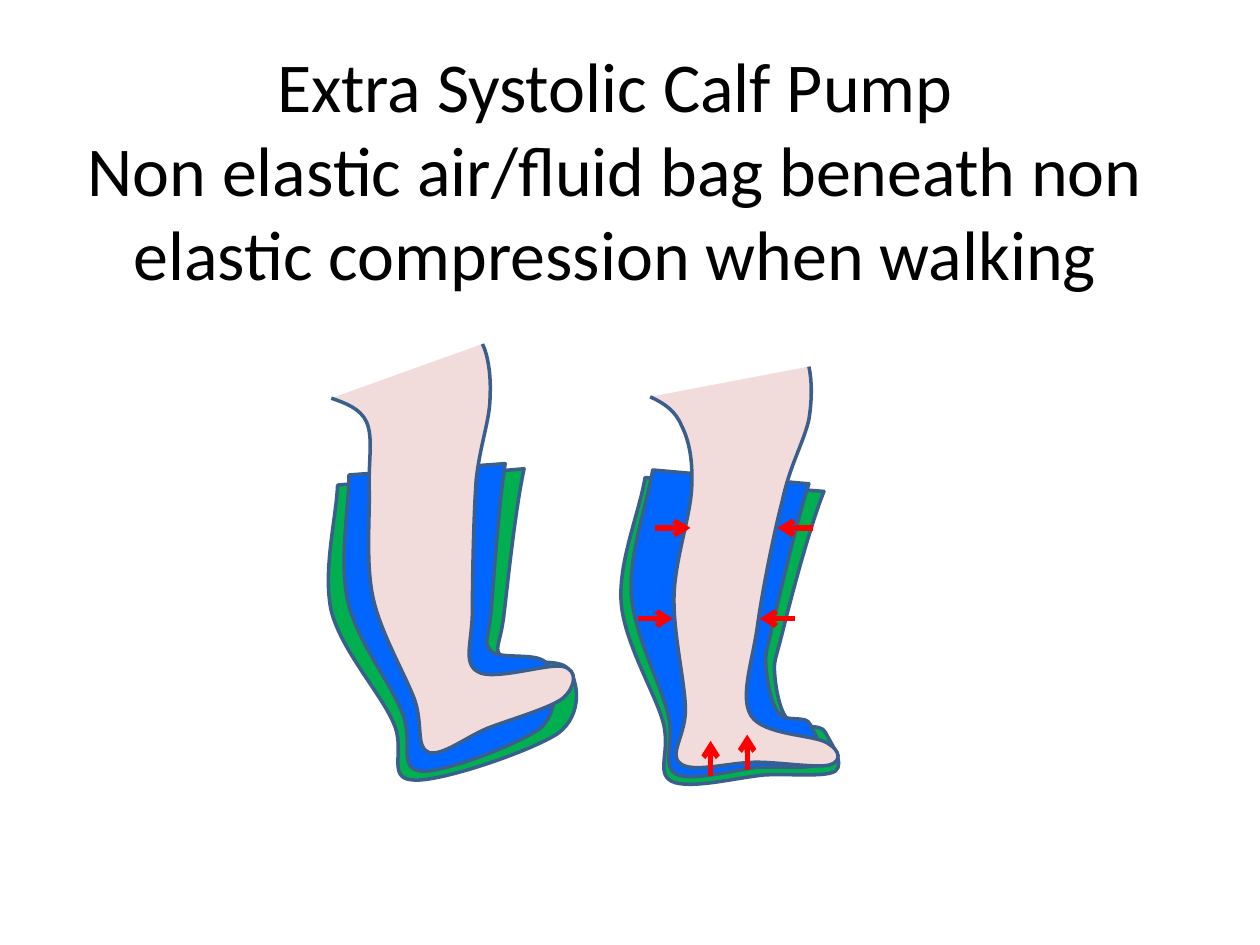
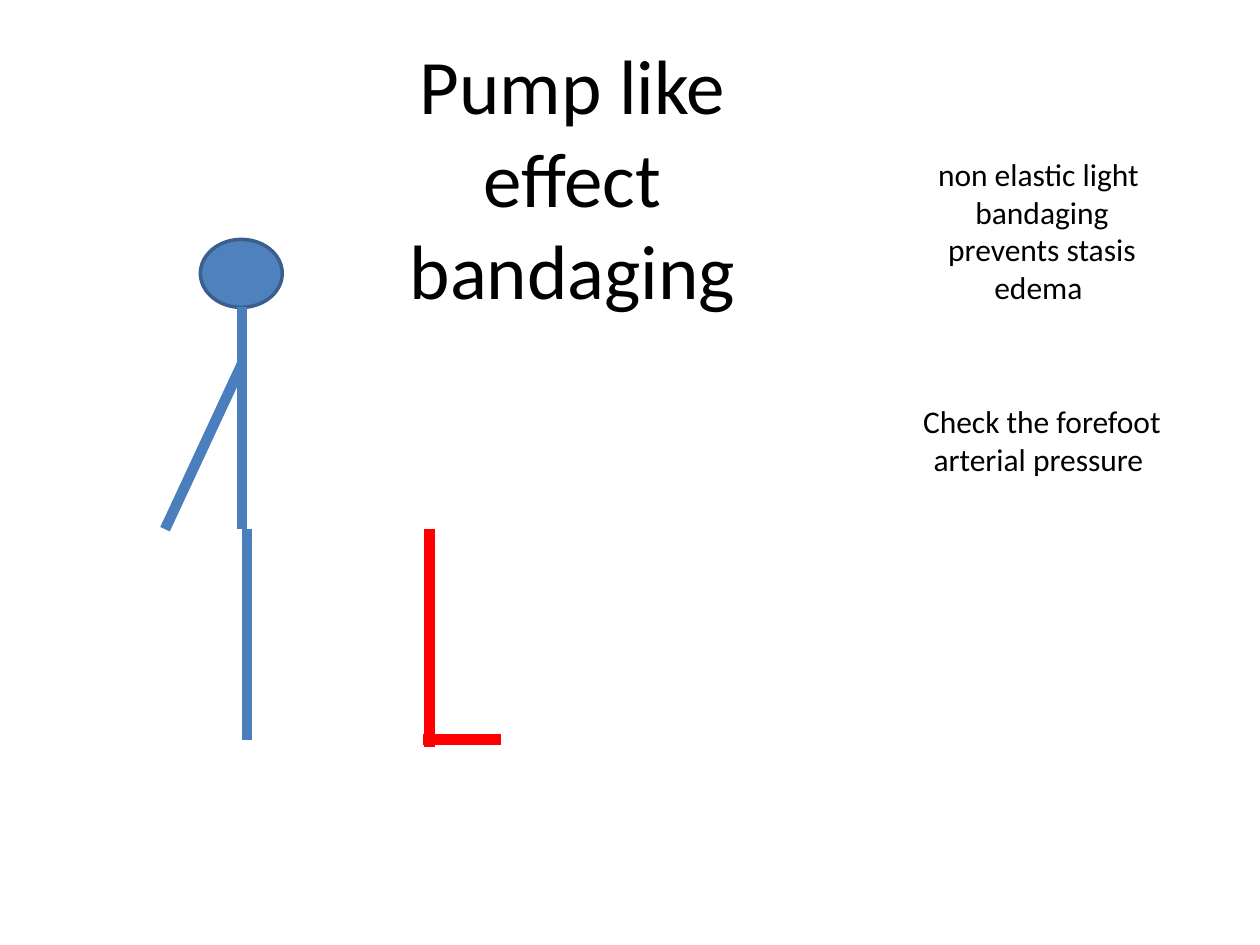
import math
from dataclasses import dataclass

import lxml.etree
import pptx
import pptx.dml.color
import pptx.enum.shapes
import pptx.enum.text
import pptx.oxml.ns
import pptx.util

RGBColor = pptx.dml.color.RGBColor
qn = pptx.oxml.ns.qn

BLACK = RGBColor(0x00, 0x00, 0x00)
SHELL_GREEN = RGBColor(0x00, 0xB0, 0x50)
LINER_BLUE = RGBColor(0x00, 0x66, 0xFF)
SKIN = RGBColor(0xF2, 0xDC, 0xDB)
OUTLINE = RGBColor(0x3A, 0x5F, 0x8C)
HEAD_BLUE = RGBColor(0x4F, 0x81, 0xBD)
BODY_BLUE = RGBColor(0x4B, 0x7E, 0xBC)
RED = RGBColor(0xFF, 0x00, 0x00)
FONT = "Calibri"

SLIDE_W = pptx.util.Inches(10)
SLIDE_H = pptx.util.Inches(7.5)
COLUMNS = 1000
CELL = SLIDE_W // COLUMNS
TITLE_ONLY = 5
ARROW_LENGTH = 28
LINER_SHIFT = (-2.5, -6)

Point = tuple[float, float]


@dataclass(frozen=True)
class Box:
    left: float
    top: float
    width: float
    height: float

    def emu(self) -> list[int]:
        return [round(v * CELL) for v in (self.left, self.top, self.width, self.height)]


@dataclass(frozen=True)
class Leg:
    shell: list[Point]
    limb: list[Point]
    centre: Point
    liner_width: float
    tilt: float = 0

    def liner(self) -> list[Point]:
        cos, sin = math.cos(math.radians(self.tilt)), math.sin(math.radians(self.tilt))
        cx, cy = self.centre
        dx, dy = LINER_SHIFT
        points = []
        for x, y in self.shell:
            across = ((x - cx) * cos + (y - cy) * sin) * self.liner_width
            along = (y - cy) * cos - (x - cx) * sin
            points.append((cx + dx + across * cos - along * sin,
                           cy + dy + across * sin + along * cos))
        return points


@dataclass(frozen=True)
class Stroke:
    start: Point
    end: Point
    color: RGBColor
    width: float
    arrow: bool = False


@dataclass(frozen=True)
class Note:
    text: str
    box: Box


LIFTED_LEG = Leg(
    shell=[
        (268, 385),
        (267, 411), (256, 453), (263, 485), (271, 516), (302, 550), (312, 573),
        (323, 595), (306, 618), (328, 619), (349, 621), (422, 596), (443, 582),
        (463, 567), (459, 540), (451, 531), (444, 521), (408, 529), (399, 522),
        (391, 515), (397, 513), (400, 488), (403, 463), (409, 404), (416, 372),
    ],
    limb=[
        (263, 316),
        (274, 320), (286, 324), (291, 335), (296, 347), (293, 362), (293, 385),
        (294, 408), (290, 445), (296, 474), (302, 502), (321, 534), (329, 555),
        (336, 575), (330, 593), (340, 597), (350, 601), (370, 585), (387, 578),
        (405, 571), (437, 562), (447, 554), (457, 545), (459, 532), (447, 529),
        (436, 526), (391, 541), (379, 533), (367, 526), (375, 509), (375, 484),
        (375, 458), (376, 409), (378, 381), (381, 353), (389, 333), (389, 315),
        (390, 297), (387, 281), (383, 273),
    ],
    centre=(357, 493),
    liner_width=0.83,
    tilt=-9.1,
)

STANDING_LEG = Leg(
    shell=[
        (512, 379),
        (508, 405), (491, 445), (493, 477), (495, 509), (519, 548), (526, 572),
        (533, 596), (520, 613), (533, 620), (547, 627), (585, 617), (607, 615),
        (628, 614), (655, 617), (663, 612), (671, 606), (659, 589), (655, 581),
        (651, 573), (632, 580), (626, 572), (619, 565), (616, 548), (615, 536),
        (614, 524), (615, 526), (621, 502), (627, 478), (642, 420), (654, 390),
    ],
    limb=[
        (516, 315),
        (527, 320), (536, 326), (541, 338), (547, 350), (550, 365), (549, 387),
        (548, 410), (536, 443), (535, 472), (534, 501), (543, 538), (544, 561),
        (545, 583), (530, 599), (540, 606), (549, 614), (580, 605), (600, 605),
        (620, 605), (649, 610), (659, 607), (668, 604), (667, 596), (657, 590),
        (647, 583), (606, 584), (596, 568), (587, 553), (597, 526), (601, 498),
        (605, 469), (614, 424), (621, 397), (627, 369), (638, 351), (642, 333),
        (645, 315), (644, 300), (642, 291),
    ],
    centre=(579, 500.5),
    liner_width=0.88,
)

PRESSURE_ARROWS = [
    ((520, 419), (1, 0)), ((506, 491), (1, 0)),
    ((645, 419), (-1, 0)), ((631, 491), (-1, 0)),
    ((564, 616), (0, -1)), ((593, 611), (0, -1)),
]

HEAD = Box(159, 190, 65, 54)
HIP_Y, ANKLE_Y = 420, 587
FIGURE = [
    Stroke((192, 244), (192, HIP_Y), BODY_BLUE, 6),
    Stroke((341, HIP_Y), (341, 593), RED, 6),
    Stroke((196, HIP_Y), (196, ANKLE_Y), BODY_BLUE, 6),
    Stroke((192, 289), (131, HIP_Y), BODY_BLUE, 6),
    Stroke((336, ANKLE_Y), (398, ANKLE_Y), RED, 6),
]

NOTES = [
    Note("non elastic light  bandaging prevents stasis edema ", Box(720, 118, 214, 131)),
    Note("Check the forefoot arterial pressure ", Box(720, 314, 214, 71)),
]


def write(tf, text: str, *, size: float, color: RGBColor = BLACK) -> None:
    tf.word_wrap = True
    tf.auto_size = pptx.enum.text.MSO_AUTO_SIZE.NONE
    tf.vertical_anchor = pptx.enum.text.MSO_ANCHOR.TOP
    for i, line in enumerate(text.split("\n")):
        p = tf.add_paragraph() if i else tf.paragraphs[0]
        p.alignment = pptx.enum.text.PP_ALIGN.CENTER
        r = p.add_run()
        r.text = line
        r.font.name = FONT
        r.font.size = pptx.util.Pt(size)
        r.font.color.rgb = color


def add_titled_slide(prs, title: str, box: Box, size: float):
    slide = prs.slides.add_slide(prs.slide_layouts[TITLE_ONLY])
    sp = slide.shapes.title
    sp.left, sp.top, sp.width, sp.height = box.emu()
    write(sp.text_frame, title, size=size)
    return slide


def paint(sp, fill: RGBColor) -> None:
    sp.shadow.inherit = False
    sp.fill.solid()
    sp.fill.fore_color.rgb = fill
    sp.line.color.rgb = OUTLINE
    sp.line.width = pptx.util.Pt(2)


def add_curve(slide, points: list[Point], fill: RGBColor, closed: bool) -> None:
    builder = slide.shapes.build_freeform(*points[0], scale=CELL)
    builder.add_line_segments(points[1:], close=closed)
    sp = builder.convert_to_shape()
    contour = sp._element.find(".//" + qn("a:path"))
    corners = iter(contour.findall(qn("a:lnTo")))
    for first, second, third in zip(corners, corners, corners):
        first.tag = qn("a:cubicBezTo")
        for corner in (second, third):
            first.append(corner[0])
            contour.remove(corner)
    paint(sp, fill)


def add_leg(slide, leg: Leg) -> None:
    add_curve(slide, leg.shell, SHELL_GREEN, closed=True)
    add_curve(slide, leg.liner(), LINER_BLUE, closed=True)
    add_curve(slide, leg.limb, SKIN, closed=False)


def add_stroke(slide, stroke: Stroke) -> None:
    ends = [round(v * CELL) for v in stroke.start + stroke.end]
    sp = slide.shapes.add_connector(pptx.enum.shapes.MSO_CONNECTOR.STRAIGHT, *ends)
    sp.line.color.rgb = stroke.color
    sp.line.width = pptx.util.Pt(stroke.width)
    if stroke.arrow:
        lxml.etree.SubElement(sp.line._get_or_add_ln(), qn("a:tailEnd"), type="arrow")
    lxml.etree.SubElement(sp._element.spPr, qn("a:effectLst"))


def build_calf_pump(prs) -> None:
    title = ("Extra Systolic Calf Pump\n"
             "Non elastic air/fluid bag beneath non elastic compression when walking")
    slide = add_titled_slide(prs, title, Box(43, 29, 890, 212), 40)
    for leg in (STANDING_LEG, LIFTED_LEG):
        add_leg(slide, leg)
    for (x, y), (dx, dy) in PRESSURE_ARROWS:
        tip = (x + dx * ARROW_LENGTH, y + dy * ARROW_LENGTH)
        add_stroke(slide, Stroke((x, y), tip, RED, 3, arrow=True))


def build_bandaging(prs) -> None:
    slide = add_titled_slide(prs, "Pump like effect bandaging", Box(291, 25, 327, 306), 44)
    head = slide.shapes.add_shape(pptx.enum.shapes.MSO_SHAPE.OVAL, *HEAD.emu())
    paint(head, HEAD_BLUE)
    for stroke in FIGURE:
        add_stroke(slide, stroke)
    for note in NOTES:
        sp = slide.shapes.add_textbox(*note.box.emu())
        write(sp.text_frame, note.text, size=18)


def main() -> None:
    prs = pptx.Presentation()
    prs.slide_width, prs.slide_height = SLIDE_W, SLIDE_H
    build_calf_pump(prs)
    build_bandaging(prs)
    prs.save("out.pptx")


if __name__ == "__main__":
    main()
